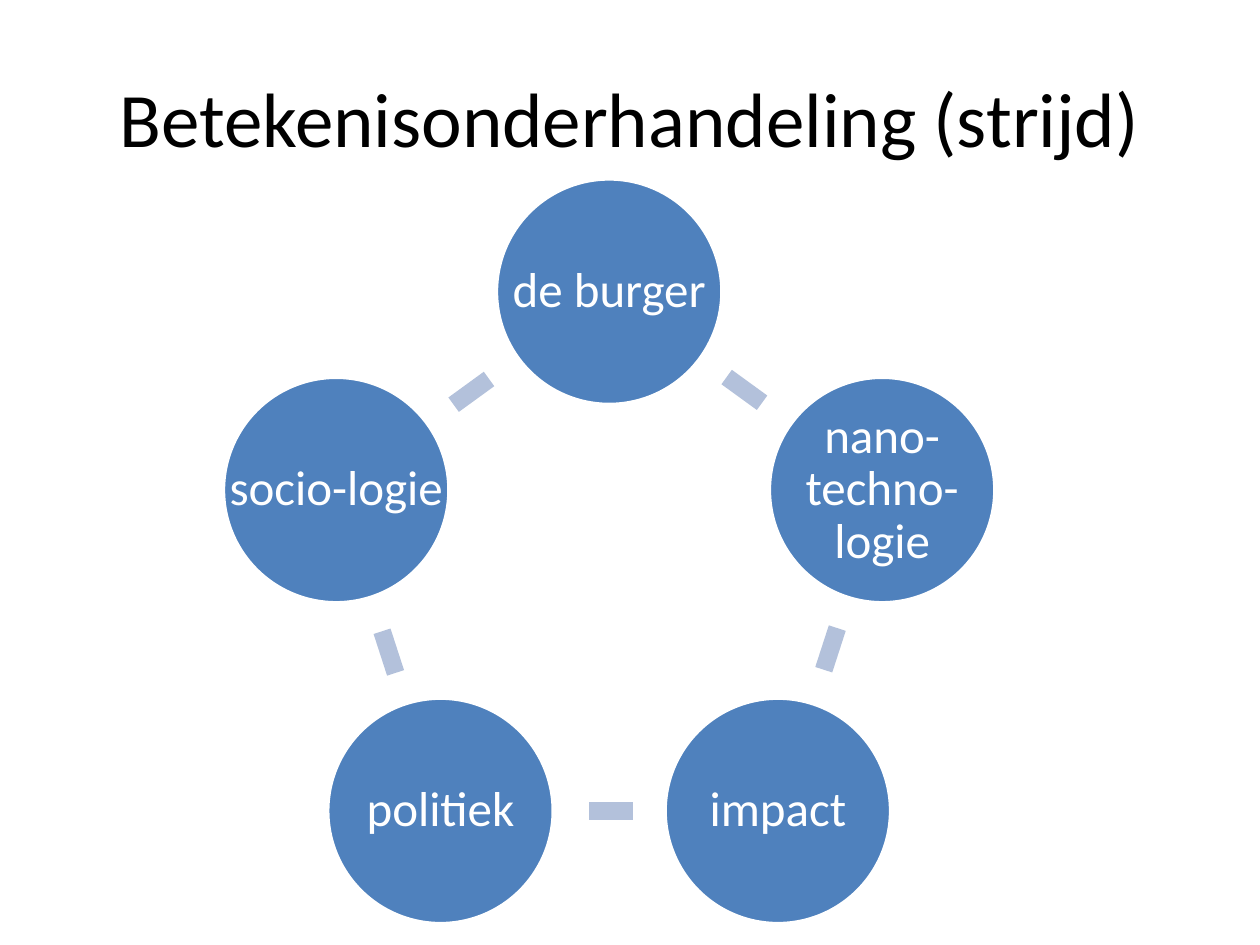
from math import cos, pi, radians, sin

from pptx import Presentation
from pptx.dml.color import RGBColor
from pptx.enum.shapes import MSO_SHAPE as Shape
from pptx.enum.text import MSO_ANCHOR as Anchor, PP_ALIGN as Align
from pptx.util import Pt

COLORS = {name: RGBColor.from_string(value) for name, value in {
    "title": "000000", "circle": "4F81BD", "link": "B3C1DB", "white": "FFFFFF",
}.items()}
FONT = "Calibri"

# Ring of circles, clockwise from the top
TOPICS = ["de burger", "nano-techno-logie", "impact", "politiek", "socio-logie"]
CENTER_X, CENTER_Y, RADIUS = 348.1, 330.7, 164
DIAMETER = 128.9
LINK_WIDTH, LINK_HEIGHT = 34, 43.2
STEP = 360 / len(TOPICS)
LINK_RADIUS = RADIUS * cos(pi / len(TOPICS))
LINK_SHIFT = -0.4  # the links sit slightly before the halfway angle


def ring_frame(angle, radius, width, height):
    """Left, top, width and height of a box centred on the ring."""
    x = CENTER_X + radius * sin(radians(angle))
    y = CENTER_Y - radius * cos(radians(angle))
    return Pt(x - width / 2), Pt(y - height / 2), Pt(width), Pt(height)


def style_text(paragraph, size, color):
    paragraph.alignment = Align.CENTER
    paragraph.font.name = FONT
    paragraph.font.size = Pt(size)
    paragraph.font.color.rgb = COLORS[color]


deck = Presentation()
deck.slide_width, deck.slide_height = Pt(720), Pt(540)
page = deck.slides.add_slide(deck.slide_layouts[5])

# Title
title = page.shapes.title
title.left, title.top, title.width, title.height = Pt(36), Pt(21.6), Pt(648), Pt(90)
title.text_frame.text = "Betekenisonderhandeling (strijd)"
title.text_frame.vertical_anchor = Anchor.MIDDLE
style_text(title.text_frame.paragraphs[0], 44, "title")

for index, topic in enumerate(TOPICS):
    angle = index * STEP
    frame = ring_frame(angle, RADIUS, DIAMETER, DIAMETER)

    # Circle
    circle = page.shapes.add_shape(Shape.OVAL, *frame)
    circle.shadow.inherit = False
    circle.fill.solid()
    circle.fill.fore_color.rgb = COLORS["circle"]
    circle.line.color.rgb = COLORS["white"]
    circle.line.width = Pt(2)

    # Label, using the full width of the circle
    label = page.shapes.add_textbox(*frame).text_frame
    label.word_wrap = True
    label.vertical_anchor = Anchor.MIDDLE
    label.margin_left = label.margin_right = Pt(2.8)
    label.margin_top = label.margin_bottom = Pt(2.8)
    label.text = topic
    label.paragraphs[0].line_spacing = 0.9
    style_text(label.paragraphs[0], 28, "white")

    # Link to the next circle
    middle = angle + STEP / 2
    link = page.shapes.add_shape(
        Shape.MATH_MINUS,
        *ring_frame(middle + LINK_SHIFT, LINK_RADIUS, LINK_WIDTH, LINK_HEIGHT))
    link.rotation = middle
    link.shadow.inherit = False
    link.fill.solid()
    link.fill.fore_color.rgb = COLORS["link"]
    link.line.fill.background()

deck.save("out.pptx")
